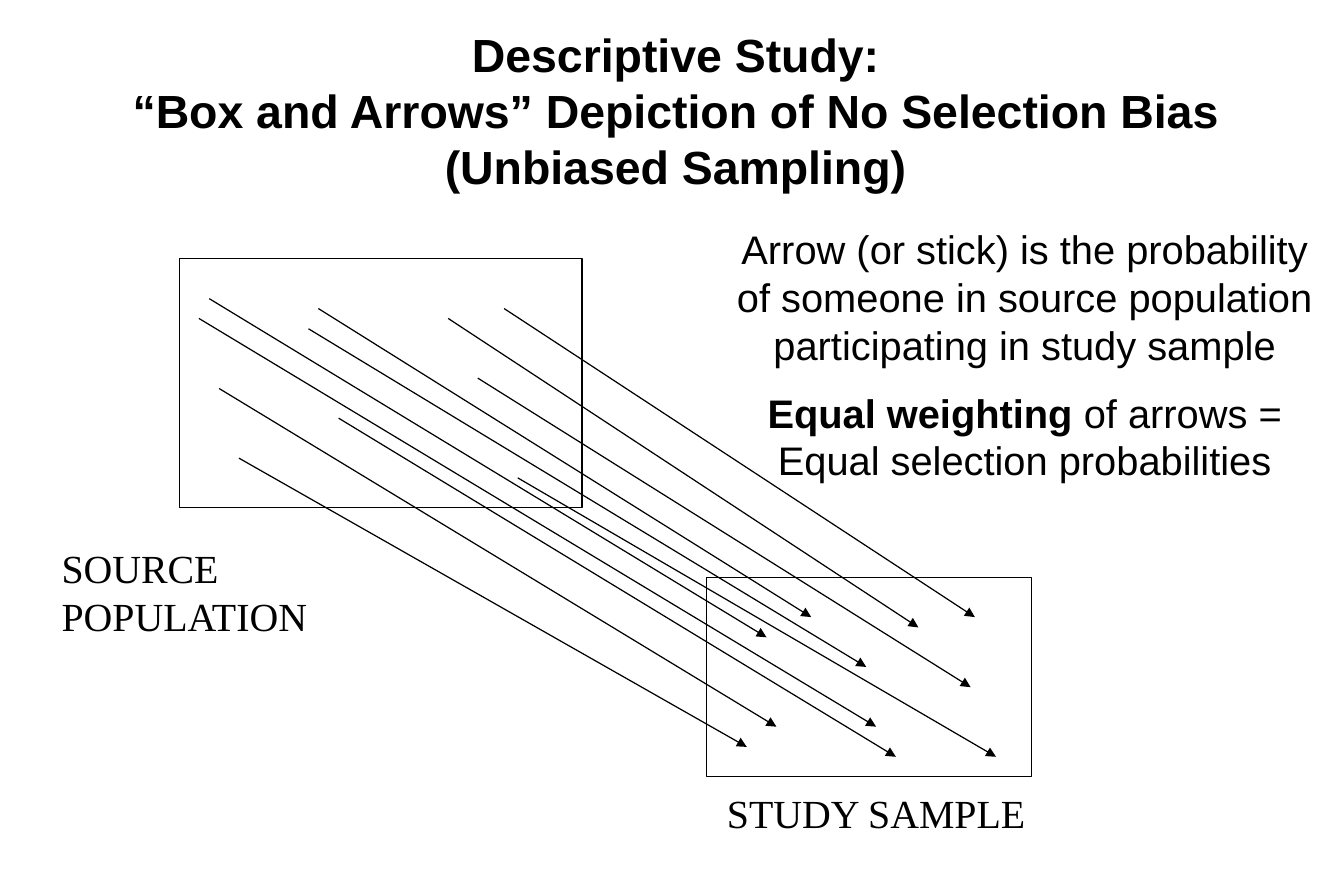
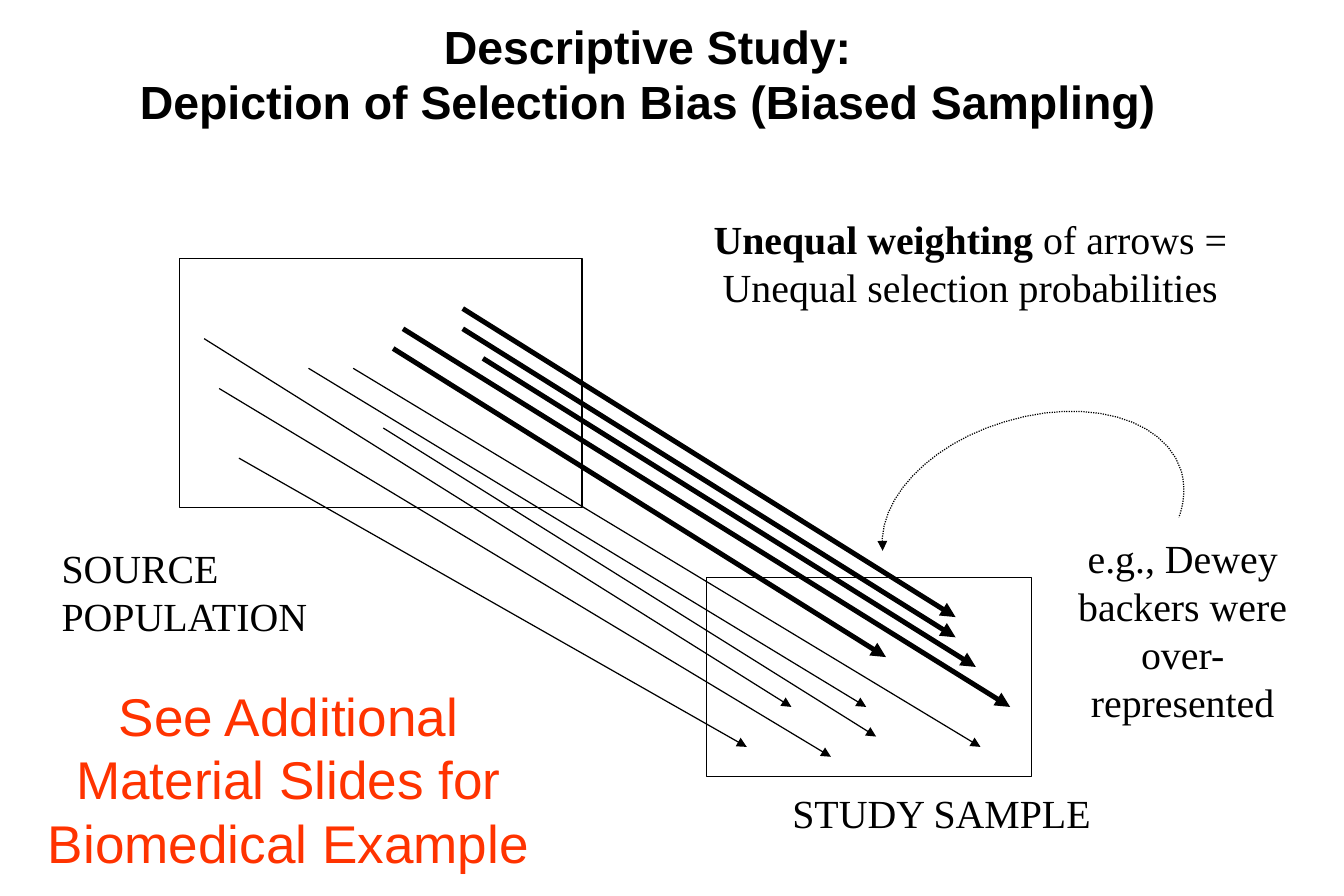
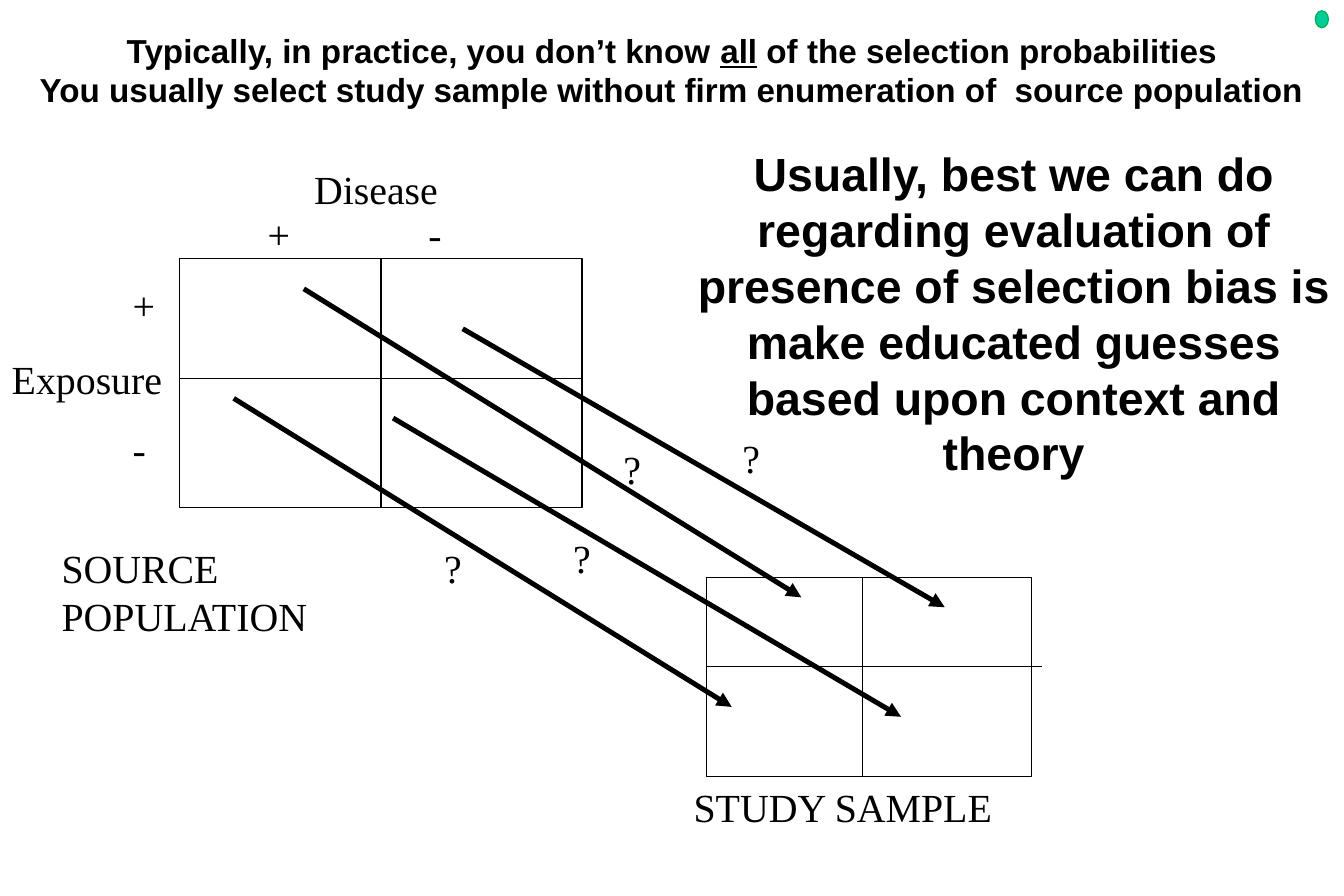
from pptx import Presentation
from pptx.dml.color import RGBColor
from pptx.enum.dml import MSO_LINE
from pptx.enum.shapes import MSO_CONNECTOR, MSO_SHAPE
from pptx.enum.text import PP_ALIGN
from pptx.oxml.ns import qn
from pptx.util import Cm, Pt
from lxml import etree

RECT, OVAL = MSO_SHAPE.RECTANGLE, MSO_SHAPE.OVAL
STRAIGHT = MSO_CONNECTOR.STRAIGHT
DOTTED = MSO_LINE.ROUND_DOT
LEFT, CENTER = PP_ALIGN.LEFT, PP_ALIGN.CENTER

COLORS = {"ink": "000000", "alert": "FF3300", "dot": "00CC99", "dot_edge": "00B050"}
SANS, SERIF = "Arial", "Times New Roman"
THIN, THICK = 0.75, 3

# Left, top, width, height of the two population boxes, in cm
SOURCE = (3.81, 5.5, 8.57, 5.29)
SAMPLE = (15.03, 12.28, 6.9, 4.23)


def rgb(name):
    return RGBColor.from_string(COLORS[name])


def bezier(p0, p1, p2, p3, steps=12):
    """Points along a cubic curve, without its first point."""
    points = []
    for i in range(1, steps + 1):
        t = i / steps
        weights = ((1 - t) ** 3, 3 * t * (1 - t) ** 2, 3 * t * t * (1 - t), t ** 3)
        points.append(tuple(sum(w * p[axis] for w, p in zip(weights, (p0, p1, p2, p3)))
                            for axis in (0, 1)))
    return points


class Deck:
    """Holds the presentation, its style and the current slide."""

    def __init__(self):
        self.prs = Presentation()
        self.prs.slide_width, self.prs.slide_height = Cm(28.58), Cm(19.05)
        self.shapes = None

    def new_slide(self):
        self.shapes = self.prs.slides.add_slide(self.prs.slide_layouts[6]).shapes

    def stroke(self, sp, color="ink", width=THIN):
        sp.line.color.rgb = rgb(color)
        sp.line.width = Pt(width)

    def arrowhead(self, sp, end):
        etree.SubElement(sp.line._get_or_add_ln(), qn(f"a:{end}"), type="triangle")

    def box(self, at, kind=RECT, fill=None, line="ink"):
        sp = self.shapes.add_shape(kind, *map(Cm, at))
        sp.shadow.inherit = False
        if fill:
            sp.fill.solid()
            sp.fill.fore_color.rgb = rgb(fill)
        else:
            sp.fill.background()
        self.stroke(sp, line)

    def line(self, ends, width=THIN, arrow=False):
        sp = self.shapes.add_connector(STRAIGHT, *map(Cm, ends))
        etree.SubElement(sp._element.spPr, qn("a:effectLst"))
        self.stroke(sp, width=width)
        if arrow:
            self.arrowhead(sp, "tailEnd")

    def arrows(self, rows, width=THIN):
        for ends in rows:
            self.line(ends, width, arrow=True)

    def curve(self, points):
        """Dotted curve with an arrowhead at its first point."""
        start, *rest = [(Cm(x), Cm(y)) for x, y in points]
        builder = self.shapes.build_freeform(*start)
        builder.add_line_segments(rest, close=False)
        sp = builder.convert_to_shape()
        sp.shadow.inherit = False
        sp.fill.background()
        self.stroke(sp)
        sp.line.dash_style = DOTTED
        self.arrowhead(sp, "headEnd")

    def text(self, at, *paras, align=LEFT, color="ink", gap=0, first_indent=0, **fmt):
        """Each paragraph is a string or a list of (string, format) runs."""
        style = {"name": SERIF, "size": Pt(24), "bold": False, **fmt}
        tf = self.shapes.add_textbox(*map(Cm, at)).text_frame
        tf.word_wrap = True
        for i, para in enumerate(paras):
            p = tf.add_paragraph() if i else tf.paragraphs[0]
            p.alignment = align
            if i:
                p.space_before = Pt(gap)
            elif first_indent:
                p._p.get_or_add_pPr().set("marR", str(Cm(first_indent)))
            for words, extra in [(para, {})] if isinstance(para, str) else para:
                r = p.add_run()
                r.text = words
                r.font.color.rgb = rgb(color)
                for key, value in {**style, **extra}.items():
                    setattr(r.font, key, value)

    def title(self, at, *paras, size=28, **options):
        self.text(at, *paras, align=CENTER, name=SANS, size=Pt(size), bold=True, **options)

    def populations(self, label_left, label_top):
        """Both boxes with their labels; the sample label moves by slide."""
        self.box(SOURCE)
        self.box(SAMPLE)
        self.text((1.06, 11.43, 6.35, 2.3), "SOURCE POPULATION")
        self.text((label_left, label_top, 7.2, 1.27), "STUDY SAMPLE")


def unbiased(deck):
    deck.new_slide()
    deck.populations(15.21, 16.64)
    deck.title((1.85, 0.43, 25.58, 3.84), "Descriptive Study:",
               "“Box and Arrows” Depiction of No Selection Bias (Unbiased Sampling)",
               first_indent=0.55)
    deck.arrows([
        (6.77, 6.56, 17.25, 13.12), (5.08, 9.74, 15.88, 15.88),
        (10.72, 6.56, 20.73, 13.12), (11.01, 10.16, 21.18, 16.09),
        (4.23, 6.77, 18.63, 15.45), (9.53, 6.77, 19.53, 13.34),
        (10.16, 8.04, 20.64, 14.61), (4.66, 8.26, 16.51, 15.45),
        (6.56, 6.99, 18.42, 14.18), (7.2, 8.89, 19.05, 16.09),
        (4.45, 6.35, 16.3, 13.55),
    ])
    deck.text((15.34, 4.66, 12.9, 5.89),
              "Arrow (or stick) is the probability of someone in source population "
              "participating in study sample",
              [("Equal weighting ", {"bold": True}),
               ("of arrows = Equal selection probabilities", {})],
              align=CENTER, name=SANS, gap=12)


def biased(deck):
    deck.new_slide()
    deck.populations(16.6, 16.64)
    deck.title((2.54, 0.25, 23.01, 2.62), "Descriptive Study:",
               "Depiction of Selection Bias (Biased Sampling)", first_indent=0.55)
    deck.arrows([
        (5.08, 9.74, 15.88, 15.88), (4.66, 8.26, 17.67, 16.09),
        (6.56, 7.83, 18.42, 15.03), (4.34, 7.2, 16.83, 15.03),
        (8.15, 9.1, 18.63, 15.66), (7.51, 7.83, 20.85, 15.88),
    ])
    deck.arrows([
        (8.36, 7.41, 18.84, 13.97), (8.57, 6.99, 21.48, 15.03),
        (10.27, 7.62, 20.75, 14.18), (9.84, 6.99, 20.32, 13.55),
        (9.84, 6.56, 20.32, 13.12),
    ], THICK)

    # Example and the dotted curve that leads from it to the heavy arrows
    deck.text((22.56, 11.23, 5.18, 4.32), "e.g., Dewey backers were over-represented",
              align=CENTER)
    tip, crest, shoulder, tail = (18.77, 11.71), (21.36, 8.97), (25.12, 10.01), (25.07, 11)
    deck.curve([tip,
                *bezier(tip, (18.64, 10.64), (19.74, 9.45), crest),
                *bezier(crest, (23.09, 8.43), (24.77, 8.89), shoulder),
                *bezier(shoulder, (25.2, 10.31), (25.2, 10.64), tail)])

    deck.text((0.74, 14.4, 10.8, 4.37),
              "See Additional Material Slides for Biomedical Example",
              align=CENTER, color="alert", name=SANS, size=Pt(32))
    deck.text((14.5, 4.45, 12.27, 2.31),
              [("Unequal weighting ", {"bold": True}),
               ("of arrows = Unequal selection probabilities", {})], align=CENTER)


def unknown(deck):
    deck.new_slide()
    deck.populations(14.5, 16.51)

    # Two-by-two divisions of both boxes
    for ends in [(8.1, 5.5, 8.1, 10.79), (3.81, 8.05, 12.38, 8.05),
                 (18.34, 12.28, 18.34, 16.51), (15.03, 14.17, 22.15, 14.17)]:
        deck.line(ends)
    for left, top, width, label in [
            (6.43, 3.38, 3.6, "Disease"), (0, 7.42, 4, "Exposure"),
            (5.44, 4.34, 1.1, "+"), (8.86, 4.34, 1.1, "-"),
            (2.57, 5.84, 1.1, "+"), (2.57, 8.9, 1.1, "-")]:
        deck.text((left, top, width, 1.27), label)

    deck.arrows([
        (9.84, 6.99, 20.09, 12.91), (6.46, 6.14, 17.04, 12.7),
        (8.36, 8.89, 19.16, 15.24), (4.97, 8.47, 15.56, 15.03),
    ], THICK)
    for left, top in [(11.74, 11.23), (12.81, 9.32), (15.34, 9.1), (9, 11.43)]:
        deck.text((left, top, 1.27, 1.27), "?", align=CENTER)

    deck.title((0, 0.51, 28.58, 2), [
        ("Typically, in practice, you don’t know ", {}), ("all", {"underline": True}),
        (" of the selection probabilities", {})],
        "You usually select study sample without firm enumeration of  source population",
        size=20)
    deck.title((14.53, 2.97, 14.05, 7.44),
               "Usually, best we can do regarding evaluation of presence of selection bias "
               "is make educated guesses based upon context and theory")
    deck.box((27.97, 0.23, 0.28, 0.36), OVAL, "dot", "dot_edge")


def main():
    deck = Deck()
    for build in (unbiased, biased, unknown):
        build(deck)
    deck.prs.save("out.pptx")


if __name__ == "__main__":
    main()
